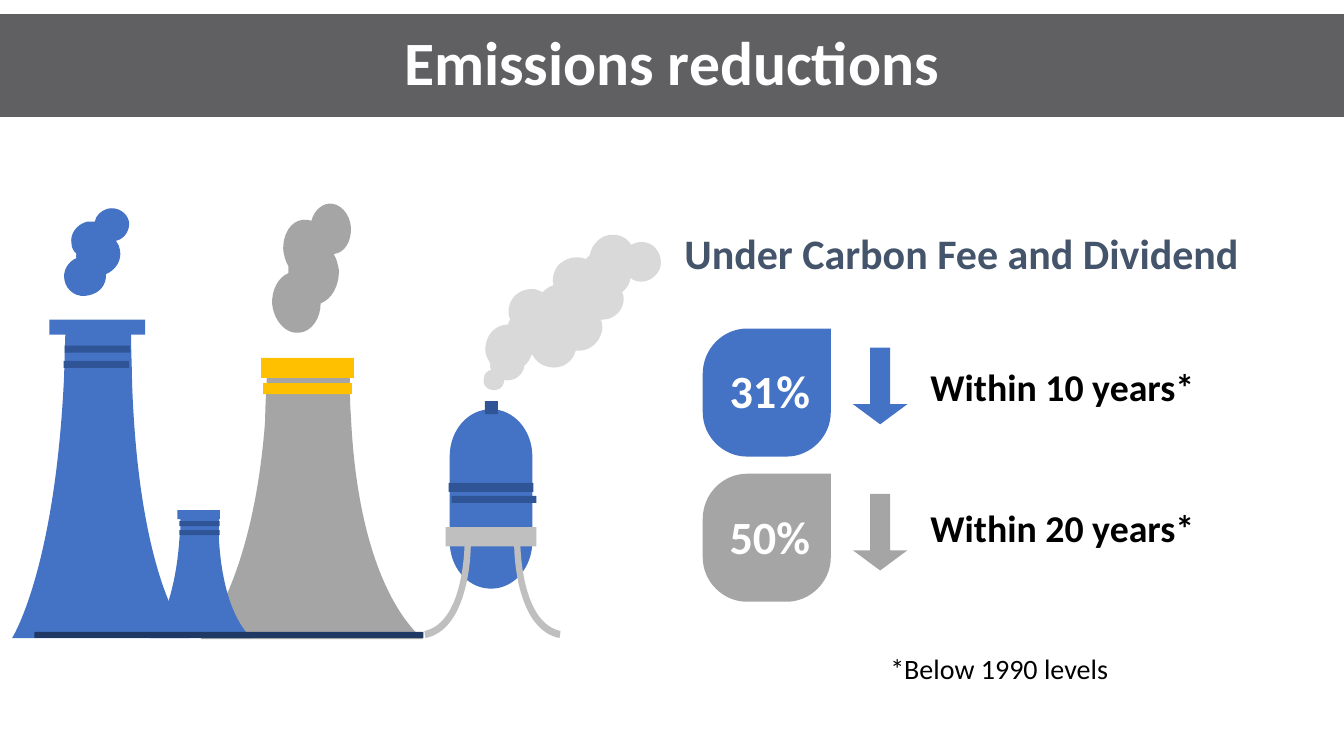
from lxml.etree import SubElement
from pptx import Presentation
from pptx.dml.color import RGBColor
from pptx.enum.shapes import MSO_SHAPE
from pptx.enum.text import MSO_ANCHOR, MSO_AUTO_SIZE, PP_ALIGN
from pptx.oxml.ns import qn
from pptx.util import Emu, Pt

PX = 9144  # 100 px to the inch
FONT = "Calibri"

BLUE = RGBColor(0x44, 0x72, 0xC4)
DARK_BLUE = RGBColor(0x2F, 0x55, 0x97)
NAVY = RGBColor(0x20, 0x38, 0x64)
GRAY = RGBColor(0xA5, 0xA5, 0xA5)
LEG_GRAY = RGBColor(0xBF, 0xBF, 0xBF)
PALE_GRAY = RGBColor(0xD9, 0xD9, 0xD9)
GOLD = RGBColor(0xFF, 0xC0, 0x00)
TITLE_GRAY = RGBColor(0x60, 0x60, 0x62)
SLATE = RGBColor(0x44, 0x54, 0x6A)
WHITE = RGBColor(0xFF, 0xFF, 0xFF)
BLACK = RGBColor(0x00, 0x00, 0x00)

# An outline is a start point, then lines (x, y) and cubic curves (x1, y1, x2, y2, x, y).
GRAY_SMOKE = [
    (348, 225), (347, 212, 337, 201, 326, 202), (318, 203, 311, 210, 309, 219),
    (306, 218, 304, 218, 301, 218), (288, 219, 280, 233, 281, 249),
    (282, 254, 283, 259, 286, 264), (286, 266, 286, 268, 286, 271),
    (276, 275, 269, 288, 270, 302), (272, 319, 284, 332, 297, 330),
    (309, 329, 318, 316, 318, 301), (329, 297, 337, 283, 336, 267),
    (335, 262, 334, 257, 331, 252), (342, 251, 349, 239, 348, 225)]
BLUE_SMOKE = [
    (128, 220), (126, 211, 117, 205, 107, 207), (100, 209, 95, 214, 94, 220),
    (91, 220, 89, 220, 86, 220), (76, 223, 69, 232, 71, 242),
    (71, 246, 73, 249, 76, 252), (75, 253, 75, 255, 76, 256),
    (67, 260, 62, 269, 64, 278), (66, 289, 77, 296, 88, 293),
    (99, 291, 106, 282, 105, 272), (115, 268, 121, 258, 119, 248),
    (119, 245, 117, 242, 115, 239), (124, 237, 129, 228, 128, 220)]
PALE_SMOKE = [
    (648, 244), (641, 239, 633, 239, 626, 243), (625, 241, 623, 239, 621, 237),
    (611, 230, 597, 232, 590, 242), (587, 245, 586, 249, 585, 253),
    (584, 254, 582, 256, 581, 257), (572, 253, 560, 256, 553, 264),
    (549, 270, 547, 277, 549, 283), (545, 284, 541, 287, 538, 290),
    (536, 289, 534, 288, 531, 287), (519, 285, 507, 293, 505, 304),
    (504, 309, 504, 313, 506, 317), (505, 319, 504, 320, 504, 322),
    (493, 322, 484, 330, 482, 341), (480, 348, 482, 354, 486, 360),
    (486, 362, 486, 365, 487, 367), (483, 368, 480, 371, 480, 375),
    (478, 381, 482, 386, 488, 387), (493, 388, 499, 385, 500, 379),
    (500, 379, 500, 378, 500, 377), (509, 379, 518, 373, 520, 364),
    (519, 364, 519, 363, 520, 363), (523, 360, 526, 357, 527, 352),
    (527, 352, 528, 352, 528, 352), (531, 358, 537, 363, 544, 364),
    (556, 367, 568, 360, 571, 348), (584, 349, 594, 341, 597, 329),
    (598, 324, 597, 320, 596, 317), (606, 318, 616, 311, 618, 301),
    (619, 297, 619, 294, 617, 290), (618, 289, 619, 288, 620, 287),
    (623, 284, 625, 280, 625, 276), (634, 282, 645, 280, 652, 271),
    (658, 263, 656, 251, 648, 244)]
GRAY_TOWER = [
    (348, 412), (347, 401, 347, 385, 347, 368), (265, 368),
    (264, 388, 263, 405, 263, 417), (251, 579, 199, 634, 199, 634),
    (420, 634), (420, 634, 356, 591, 348, 412)]
BLUE_TOWER = [
    (131, 379), (131, 366, 130, 348, 130, 328), (65, 328),
    (64, 351, 64, 371, 63, 385), (53, 569, 12, 633, 12, 633),
    (188, 633), (188, 633, 138, 583, 131, 379)]
SMALL_TOWER = [
    (217, 532), (217, 527, 217, 519, 217, 512), (179, 512),
    (179, 521, 179, 529, 178, 534), (173, 608, 149, 633, 149, 633),
    (250, 633), (250, 633, 221, 613, 217, 532)]
TANK = [
    (528, 537), (528, 563, 510, 584, 487, 584), (464, 584, 446, 563, 446, 537),
    (446, 453), (446, 427, 464, 406, 487, 406), (510, 406, 528, 427, 528, 453)]
LEFT_LEG = [
    (422, 633), (421, 626), (463, 617, 461, 532, 461, 531), (467, 531),
    (467, 532, 468, 554, 463, 577), (456, 610, 442, 629, 422, 633)]
BADGE = [
    (780, 453), (741, 453), (717, 453, 697, 433, 697, 409), (697, 371),
    (697, 346, 717, 326, 741, 326), (824, 326), (824, 409),
    (824, 433, 804, 453, 780, 453)]


def paint(shape, color):
    shape.shadow.inherit = False
    shape.fill.solid()
    shape.fill.fore_color.rgb = color
    shape.line.fill.background()


def add_outline(page, outline, color, drop=0, mirror=None):
    """Draw an outline, moved down by drop or mirrored about the x given."""
    segments = [[(round((x if mirror is None else 2 * mirror - x) * PX), (y + drop) * PX)
                 for x, y in zip(segment[::2], segment[1::2])] for segment in outline]
    ends = [segment[-1] for segment in segments]
    builder = page.shapes.build_freeform(*ends[0], scale=1.0)
    builder.add_line_segments(ends[1:], close=True)
    shape = builder.convert_to_shape()
    left, top = (min(values) for values in zip(*ends))
    lines = list(shape._element.iter(qn("a:lnTo")))
    for line, segment in zip(lines, segments[1:]):
        if len(segment) == 3:
            bend_line(line, [(x - left, y - top) for x, y in segment])
    paint(shape, color)


def bend_line(line, points):
    """Replace a straight segment by a cubic curve through its control points."""
    curve = line.makeelement(qn("a:cubicBezTo"))
    for x, y in points:
        SubElement(curve, qn("a:pt"), x=str(x), y=str(y))
    line.getparent().replace(line, curve)


def add_preset(page, kind, bounds, color):
    shape = page.shapes.add_shape(kind, *(Emu(length * PX) for length in bounds))
    paint(shape, color)
    return shape


def add_bands(page, color, *bands):
    for bounds in bands:
        add_preset(page, MSO_SHAPE.RECTANGLE, bounds, color)


def write(frame, text, size, color, bold=True, align=PP_ALIGN.LEFT, spacing=1.0):
    frame.word_wrap = True
    para = frame.paragraphs[0]
    para.alignment = align
    para.line_spacing = spacing
    span = para.add_run()
    span.text = text
    span.font.name = FONT
    span.font.size = Pt(size)
    span.font.bold = bold
    span.font.color.rgb = color


def add_label(page, bounds, text, size, color, margins=(10, 5), **style):
    box = page.shapes.add_textbox(*(Emu(length * PX) for length in bounds))
    frame = box.text_frame
    frame.margin_left = frame.margin_right = Emu(margins[0] * PX)
    frame.margin_top = frame.margin_bottom = Emu(margins[1] * PX)
    write(frame, text, size, color, **style)
    frame.auto_size = MSO_AUTO_SIZE.SHAPE_TO_FIT_TEXT


def add_title(page, text):
    bar = add_preset(page, MSO_SHAPE.RECTANGLE, (0, 14, 1333, 102), TITLE_GRAY)
    bar.text_frame.vertical_anchor = MSO_ANCHOR.MIDDLE
    write(bar.text_frame, text, 44, WHITE, align=PP_ALIGN.CENTER, spacing=0.9)


def add_power_plant(page):
    add_outline(page, GRAY_SMOKE, GRAY)
    add_outline(page, GRAY_TOWER, GRAY)
    add_bands(page, GOLD, (259, 355, 92, 20), (261, 380, 88, 11))
    add_outline(page, BLUE_TOWER, BLUE)
    add_bands(page, BLUE, (49, 317, 95, 15))
    add_bands(page, DARK_BLUE, (63, 358, 65, 7), (64, 343, 65, 7))
    add_outline(page, SMALL_TOWER, BLUE)
    add_bands(page, BLUE, (176, 506, 42, 9))
    add_bands(page, DARK_BLUE, (178, 517, 40, 5), (178, 526, 40, 5))
    add_outline(page, TANK, BLUE)
    add_outline(page, LEFT_LEG, LEG_GRAY)
    add_outline(page, LEFT_LEG, LEG_GRAY, mirror=488.5)
    add_bands(page, LEG_GRAY, (442, 523, 90, 19))
    add_bands(page, DARK_BLUE, (481, 398, 13, 13), (445, 479, 84, 9), (448, 492, 84, 7))
    add_outline(page, PALE_SMOKE, PALE_GRAY)
    add_bands(page, NAVY, (34, 627, 386, 6))
    add_outline(page, BLUE_SMOKE, BLUE)


def add_reduction(page, row, percent, period, color):
    drop = row * 144
    add_outline(page, BADGE, color, drop=drop)
    add_label(page, (712, 355 + drop, 103, 66), percent, 33, WHITE, align=PP_ALIGN.CENTER)
    arrow = add_preset(page, MSO_SHAPE.DOWN_ARROW, (846, 345 + row * 145, 54, 76), color)
    arrow.adjustments[0] = arrow.adjustments[1] = 0.37
    add_label(page, (913, 356 + row * 140, 313, 56), period, 27, BLACK)


def main():
    deck = Presentation()
    deck.slide_width, deck.slide_height = Emu(1333 * PX), Emu(750 * PX)
    page = deck.slides.add_slide(deck.slide_layouts[6])
    add_power_plant(page)
    add_reduction(page, 0, "31%", "Within 10 years*", BLUE)
    add_reduction(page, 1, "50%", "Within 20 years*", GRAY)
    add_label(page, (871, 637, 311, 47), "*Below 1990 levels", 20, BLACK,
              margins=(12, 6), bold=False, spacing=1.1)
    add_label(page, (669, 216, 631, 63), "Under Carbon Fee and Dividend", 30, SLATE, spacing=1.1)
    add_title(page, "Emissions reductions")
    deck.save("out.pptx")


if __name__ == "__main__":
    main()
